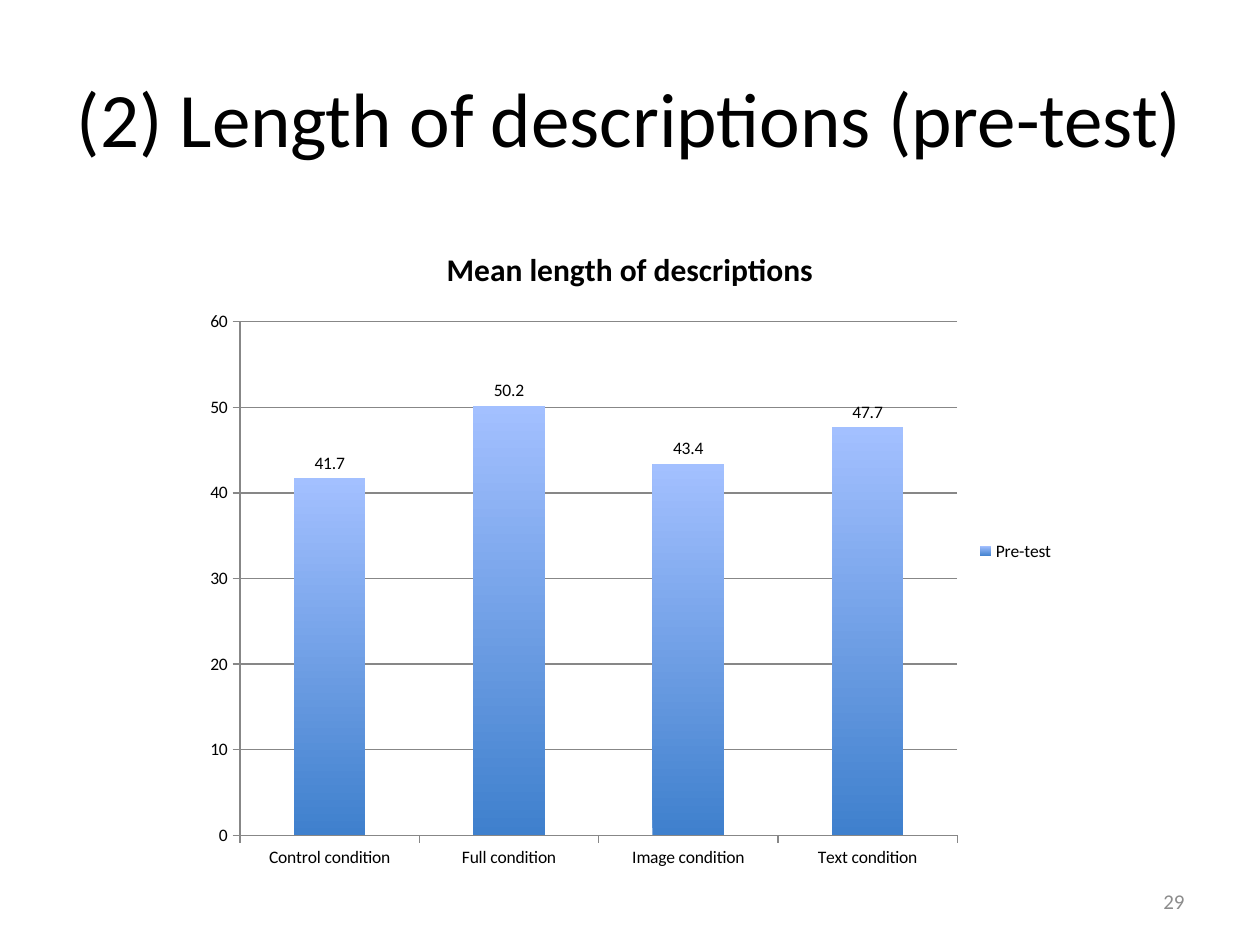
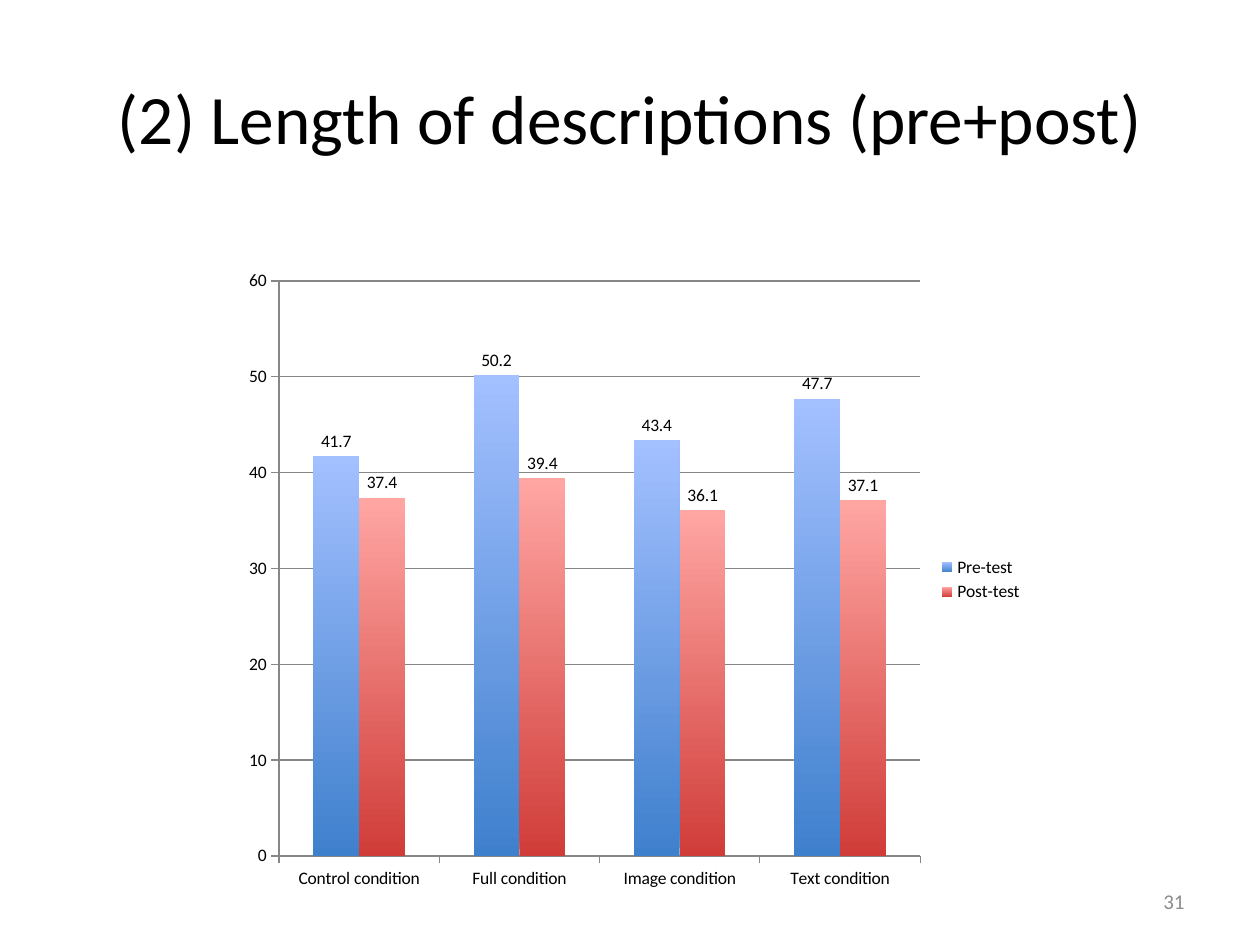
from pptx import Presentation
from pptx.chart.data import CategoryChartData
from pptx.dml.color import RGBColor
from pptx.enum.chart import XL_CHART_TYPE, XL_LABEL_POSITION, XL_LEGEND_POSITION, XL_TICK_MARK
from pptx.enum.text import MSO_ANCHOR, PP_ALIGN
from pptx.util import Inches, Pt

FONT = "Calibri"
COLORS = {"text": "000000", "page": "8C8C8C", "line": "878787"}
BARS = {"Pre-test": ("3F80CD", "A3C0FF"), "Post-test": ("D03D39", "FFA6A3")}
GROUPS = ["Control condition", "Full condition", "Image condition", "Text condition"]
MEANS = {"Pre-test": (41.7, 50.2, 43.4, 47.7), "Post-test": (37.4, 39.4, 36.1, 37.1)}


class Deck:
    """Hold the shared style and the current slide."""

    def __init__(self):
        self.prs = Presentation()
        self.prs.slide_width, self.prs.slide_height = Inches(10), Inches(7.5)

    def start(self, title, size, page):
        self.slide = self.prs.slides.add_slide(self.prs.slide_layouts[6])
        self.text(title, (0.5, 0.3, 9, 1.25), size, "text", PP_ALIGN.CENTER)
        self.text(page, (7.17, 6.95, 2.33, 0.4), 12, "page", PP_ALIGN.RIGHT)

    def style(self, font, size, color="text", bold=False):
        font.name, font.size, font.bold = FONT, Pt(size), bold
        font.color.rgb = RGBColor.from_string(COLORS[color])

    def text(self, words, box, size, color, align):
        frame = self.slide.shapes.add_textbox(*map(Inches, box)).text_frame
        frame.word_wrap = True
        frame.vertical_anchor = MSO_ANCHOR.MIDDLE
        line = frame.paragraphs[0]
        line.alignment = align
        run = line.add_run()
        run.text = words
        self.style(run.font, size, color)

    def chart(self, box, names, title=None):
        data = CategoryChartData(number_format="0.0")
        data.categories = GROUPS
        for name in names:
            data.add_series(name, MEANS[name])
        chart = self.slide.shapes.add_chart(
            XL_CHART_TYPE.COLUMN_CLUSTERED, *map(Inches, box), data).chart
        self.style(chart.font, 10)
        chart.has_title = title is not None
        if title:
            run = chart.chart_title.text_frame.paragraphs[0].add_run()
            run.text = title
            self.style(run.font, 18, bold=True)
        chart.has_legend = True
        chart.legend.position = XL_LEGEND_POSITION.RIGHT
        chart.legend.include_in_layout = False
        self.axes(chart)
        plot = chart.plots[0]
        plot.gap_width, plot.overlap = 150, 0
        plot.vary_by_categories = False
        for bar in plot.series:
            self.bar(bar)

    def axes(self, chart):
        scale = chart.value_axis
        scale.minimum_scale, scale.maximum_scale, scale.major_unit = 0, 60, 10
        scale.has_major_gridlines = True
        scale.tick_labels.number_format = "0"
        scale.tick_labels.number_format_is_linked = False
        for axis in (scale, chart.category_axis):
            axis.major_tick_mark = XL_TICK_MARK.OUTSIDE
            self.line(axis.format.line)
        self.line(scale.major_gridlines.format.line)

    def line(self, line):
        line.width = Pt(0.75)
        line.color.rgb = RGBColor.from_string(COLORS["line"])

    def bar(self, bar):
        bar.invert_if_negative = False
        fill = bar.format.fill
        fill.gradient()
        fill.gradient_angle = 90
        for stop, color in zip(fill.gradient_stops, BARS[bar.name]):
            stop.color.rgb = RGBColor.from_string(color)
        marks = bar.data_labels
        marks.show_value = True
        marks.position = XL_LABEL_POSITION.OUTSIDE_END
        self.style(marks.font, 10)


def main():
    deck = Deck()
    deck.start("(2) Length of descriptions (pre-test)", 44, "29")
    deck.chart((1.53, 1.76, 6.94, 5.23), ["Pre-test"], "Mean length of descriptions")
    deck.start("(2) Length of descriptions (pre+post)", 39.6, "31")
    deck.chart((1.85, 2.05, 6.37, 5.1), ["Pre-test", "Post-test"])
    deck.prs.save("out.pptx")


if __name__ == "__main__":
    main()
